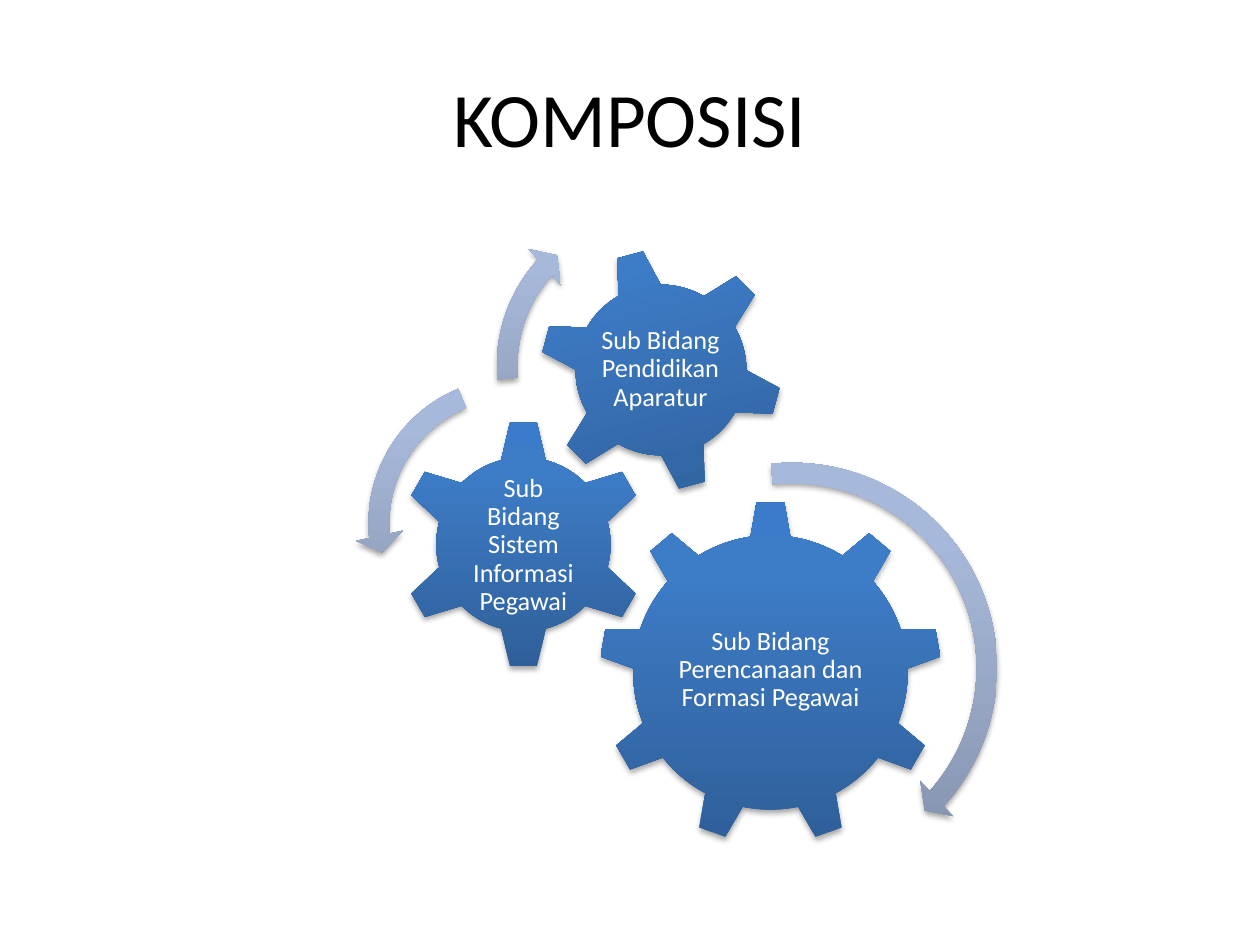
import copy

import pptx
import pptx.dml.color
import pptx.enum.shapes
import pptx.enum.text
import pptx.oxml
import pptx.oxml.ns
import pptx.util

KIND = pptx.enum.shapes.MSO_SHAPE
HEX = {
    "title": "000000",
    "label": "FFFFFF",
    "shadow": "000000",
}
# Gradient colours from the bottom up, at the positions in STOPS
FADES = {
    "gear": ("2F5F99", "3D7CC7", "3A7CCB"),
    "arrow": ("818FA8", "A7B9DA", "A7BADC"),
}
STOPS = (0, 0.8, 1)
SHADOW = (
    f'<a:outerShdw {pptx.oxml.ns.nsdecls("a")} blurRad="40000" dist="23000" '
    'dir="5400000" rotWithShape="0">'
    f'<a:srgbClr val="{HEX["shadow"]}"><a:alpha val="35000"/></a:srgbClr>'
    '</a:outerShdw>'
)


def emu(px):
    return pptx.util.Emu(round(px * 914400 / 126))


def rgb(code):
    return pptx.dml.color.RGBColor.from_string(code)


class Deck:
    def __init__(self, font):
        self.font = font
        self.file = pptx.Presentation()
        self.file.slide_width = emu(1260)
        self.file.slide_height = emu(945)
        self.slide = self.file.slides.add_slide(self.file.slide_layouts[6])

    def text(self, words, box, size, color, inset, lead=1.0):
        frame = self.slide.shapes.add_textbox(*map(emu, box)).text_frame
        frame.word_wrap = True
        frame.vertical_anchor = pptx.enum.text.MSO_ANCHOR.MIDDLE
        frame.margin_left = frame.margin_right = emu(inset)
        frame.margin_top = frame.margin_bottom = emu(inset)
        para = frame.paragraphs[0]
        para.alignment = pptx.enum.text.PP_ALIGN.CENTER
        para.line_spacing = lead
        run = para.add_run()
        run.text = words
        run.font.name = self.font
        run.font.size = pptx.util.Pt(size)
        run.font.color.rgb = rgb(HEX[color])

    def shape(self, kind, left, top, side, fade):
        """Add a square shape with an upward gradient and a soft shadow."""
        shape = self.slide.shapes.add_shape(kind, *map(emu, (left, top, side, side)))
        shape.line.fill.background()
        shape.fill.gradient()
        shape.fill.gradient_angle = 90
        props = shape._element.spPr
        stops = props.find(".//" + pptx.oxml.ns.qn("a:gsLst"))
        stops.append(copy.deepcopy(stops[-1]))
        for stop, place, code in zip(shape.fill.gradient_stops, STOPS, FADES[fade]):
            stop.position = place
            stop.color.rgb = rgb(code)
        shape.shadow.inherit = False
        effects = props.find(pptx.oxml.ns.qn("a:effectLst"))
        effects.append(pptx.oxml.parse_xml(SHADOW))
        return shape

    def gear(self, kind, spot, turn, words, box):
        self.shape(kind, *spot, "gear").rotation = turn
        self.text(words, box, 15, "label", 3, 0.9)

    def arrow(self, kind, spot, bends):
        """Add a curved arrow; bends are its adjustments in thousandths."""
        shape = self.shape(kind, *spot, "arrow")
        for i, bend in enumerate(bends):
            shape.adjustments[i] = bend / 1000


GEARS = [
    (KIND.GEAR_9, (599, 501, 343), 0,
     "Sub Bidang Perencanaan dan Formasi Pegawai", (668, 582, 205, 176)),
    (KIND.GEAR_6, (399, 420, 249), 0,
     "Sub Bidang Sistem Informasi Pegawai", (462, 484, 123, 123)),
    (KIND.GEAR_6, (539, 248, 244), 345,
     "Sub Bidang Pendidikan Aparatur", (592, 301, 137, 137)),
]
ARROWS = [
    (KIND.CIRCULAR_ARROW, (573, 449, 438), (47, 2990, 25236, 158454, 55)),
    (KIND.LEFT_CIRCULAR_ARROW, (355, 364, 319), (65, 4300, 104891, 148378, 75)),
    (KIND.CIRCULAR_ARROW, (483, 194, 344), (60, 3941, 133138, 105082, 70)),
]


def main():
    deck = Deck("Calibri")
    deck.text("KOMPOSISI", (63, 38, 1134, 158), 44, "title", 6)
    for gear in GEARS:
        deck.gear(*gear)
    for arrow in ARROWS:
        deck.arrow(*arrow)
    deck.file.save("out.pptx")


if __name__ == "__main__":
    main()
